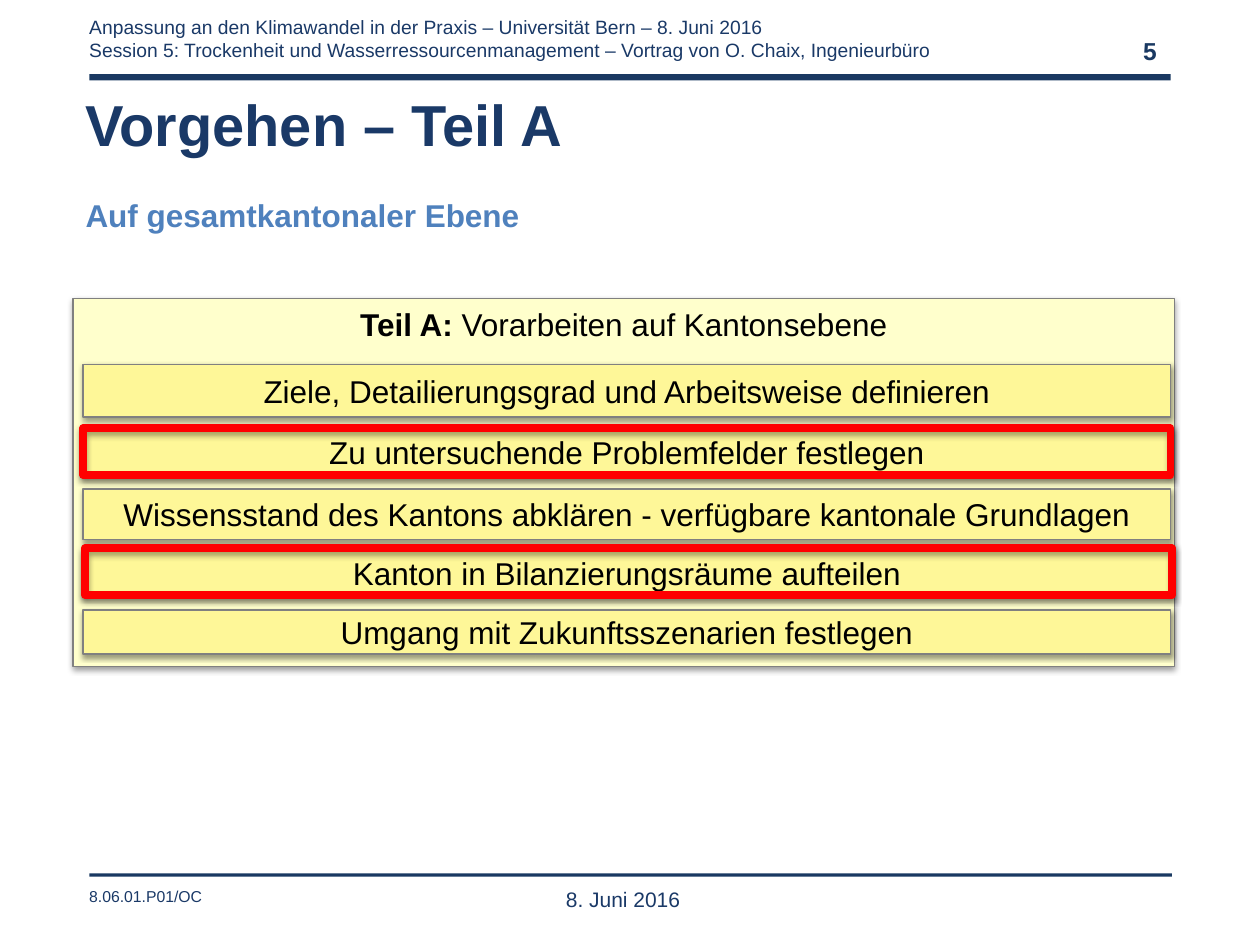
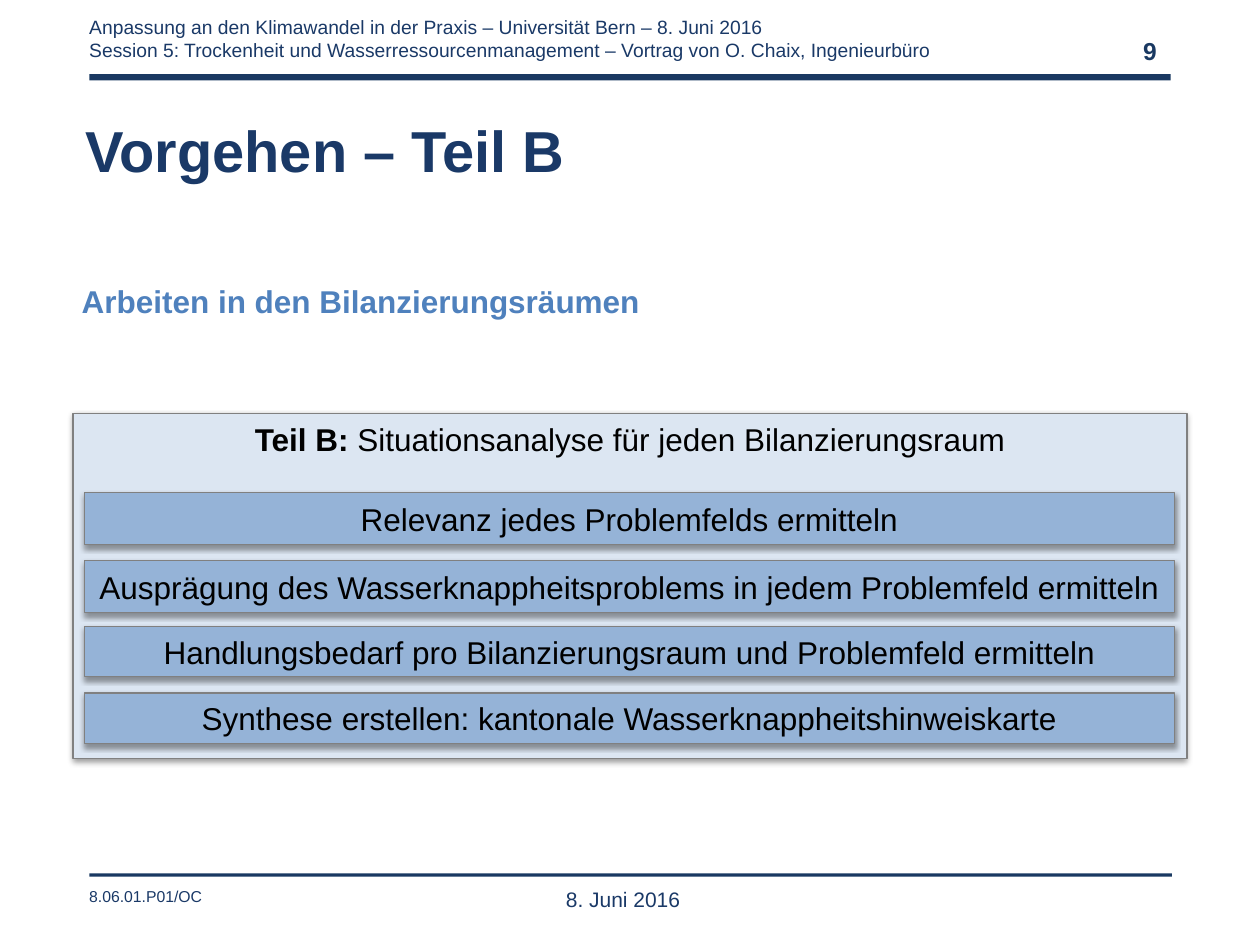
import pptx
import pptx.util
import pptx.dml.color
import pptx.enum.shapes
import pptx.enum.text
import lxml.etree

Pt = pptx.util.Pt
Align = pptx.enum.text.PP_ALIGN
Anchor = pptx.enum.text.MSO_ANCHOR
RECT = pptx.enum.shapes.MSO_SHAPE.RECTANGLE
DRAW = "http://schemas.openxmlformats.org/drawingml/2006/main"

COLORS = {
    "bar": "1A3962", "navy": "1A3967", "blue": "4F81BD", "black": "000000",
    "gray": "808080", "red": "FF0000", "cream": "FFFFCC", "yellow": "FEF798",
    "ice": "DCE6F2", "steel": "95B3D7",
}


def write(shape, text, size, color, bold=False, align=Align.LEFT, anchor=Anchor.TOP):
    frame = shape.text_frame
    frame.word_wrap = True
    frame.vertical_anchor = anchor
    frame.text = text
    for para in frame.paragraphs:
        para.alignment = align
        for run in para.runs:
            run.font.name = "Arial"
            run.font.size = Pt(size)
            run.font.bold = bold
            run.font.color.rgb = pptx.dml.color.RGBColor.from_string(COLORS[color])
    return frame.paragraphs[0]


def draw(page, area, fill=None, line=None, width=0.75, shade=None):
    """Add a rectangle; shade is the opacity of its shadow in percent."""
    rect = page.shapes.add_shape(RECT, *map(Pt, area))
    rect.shadow.inherit = False
    if fill:
        rect.fill.solid()
        rect.fill.fore_color.rgb = pptx.dml.color.RGBColor.from_string(COLORS[fill])
    else:
        rect.fill.background()
    if line:
        rect.line.color.rgb = pptx.dml.color.RGBColor.from_string(COLORS[line])
        rect.line.width = Pt(width)
    else:
        rect.line.fill.background()
    if shade:
        effects = rect.element.spPr.find(f"{{{DRAW}}}effectLst")
        outer = lxml.etree.SubElement(
            effects, f"{{{DRAW}}}outerShdw", blurRad=str(Pt(3.1)),
            dist=str(Pt(1.6)), dir="5400000", rotWithShape="0")
        color = lxml.etree.SubElement(outer, f"{{{DRAW}}}srgbClr", val=COLORS["black"])
        lxml.etree.SubElement(color, f"{{{DRAW}}}alpha", val=str(shade * 1000))
    return rect


HEAD = ("Anpassung an den Klimawandel in der Praxis – Universität Bern – 8. Juni 2016\n"
        "Session 5: Trockenheit und Wasserressourcenmanagement – Vortrag von O. Chaix, Ingenieurbüro")

# Each step: top, height, text
PARTS = [
    {
        "number": "5", "title": "Vorgehen – Teil A", "top": 59.8,
        "sub": "Auf gesamtkantonaler Ebene", "place": (41.8, 103),
        "panel": (41.8, 170.6, 629.3, 210.2), "fills": ("cream", "yellow"),
        "lead": "Teil A: ", "topic": "Vorarbeiten auf Kantonsebene",
        "left": 47.5, "width": 621.4,
        "steps": [
            (208.1, 30.2, "Ziele, Detailierungsgrad und Arbeitsweise definieren"),
            (244.8, 26.6, "Zu untersuchende Problemfelder festlegen"),
            (279.4, 28.8, "Wissensstand des Kantons abklären - verfügbare kantonale Grundlagen"),
            (314.6, 25.2, "Kanton in Bilanzierungsräume aufteilen"),
            (348.5, 25.2, "Umgang mit Zukunftsszenarien festlegen"),
        ],
        "marks": [(47.5, 244.8), (48.5, 313.4)],
    },
    {
        "number": "9", "title": "Vorgehen – Teil B", "top": 74.9,
        "sub": "Arbeiten in den Bilanzierungsräumen", "place": (39.6, 151.9),
        "panel": (41.8, 236.2, 636.5, 197.3), "fills": ("ice", "steel"),
        "lead": "Teil B: ", "topic": "Situationsanalyse für jeden Bilanzierungsraum",
        "left": 48.2, "width": 622.8,
        "steps": [
            (281.5, 29.5, "Relevanz jedes Problemfelds ermitteln"),
            (320.4, 29.5, "Ausprägung des Wasserknappheitsproblems in jedem Problemfeld ermitteln"),
            (358, 28.8, "Handlungsbedarf pro Bilanzierungsraum und Problemfeld ermitteln"),
            (396, 28.8, "Synthese erstellen: kantonale Wasserknappheitshinweiskarte"),
        ],
        "marks": [],
    },
]

deck = pptx.Presentation()
deck.slide_width, deck.slide_height = Pt(720), Pt(540)

for part in PARTS:
    page = deck.slides.add_slide(deck.slide_layouts[6])

    # Header and footer
    draw(page, (51.1, 42.3, 617.8, 3.6), "bar")
    draw(page, (51.1, 499, 618.5, 2), "bar")
    notes = [
        ((43.9, 503.3, 299.5, 18), "8.06.01.P01/OC", 9, Align.LEFT),
        ((43.9, 5, 538.6, 33.8), HEAD, 11, Align.LEFT),
        ((309.6, 503.3, 92.9, 21.6), "8. Juni 2016", 12, Align.CENTER),
    ]
    for area, text, size, align in notes:
        note = page.shapes.add_textbox(*map(Pt, area))
        write(note, text, size, "navy", align=align)
    number = page.shapes.add_textbox(Pt(515.5), Pt(14.4), Pt(152.6), Pt(28.8))
    write(number, part["number"], 14, "bar", True, Align.RIGHT, Anchor.MIDDLE)

    # Title and subtitle
    title = page.shapes.add_textbox(Pt(41.8), Pt(part["top"]), Pt(629.3), Pt(43.2))
    write(title, part["title"], 33, "navy", True).line_spacing = Pt(27)
    sub = page.shapes.add_textbox(*map(Pt, part["place"]), Pt(629.3), Pt(46))
    write(sub, part["sub"], 18, "blue", True).line_spacing = Pt(27)

    # Panel with its steps
    back, front = part["fills"]
    panel = draw(page, part["panel"], back, "gray", shade=38)
    para = write(panel, part["lead"], 18, "black", True, Align.CENTER)
    topic = para.add_run()
    topic.text = part["topic"]
    topic.font.name = "Arial"
    topic.font.size = Pt(18)
    topic.font.bold = False
    topic.font.color.rgb = pptx.dml.color.RGBColor.from_string(COLORS["black"])
    for top, height, text in part["steps"]:
        step = draw(page, (part["left"], top, part["width"], height), front, "gray", shade=38)
        write(step, text, 18, "black", align=Align.CENTER, anchor=Anchor.MIDDLE)

    # Frames around the steps in focus
    for left, top in part["marks"]:
        draw(page, (left, top, 621.4, 26.6), line="red", width=4.5, shade=35)

deck.save("out.pptx")
